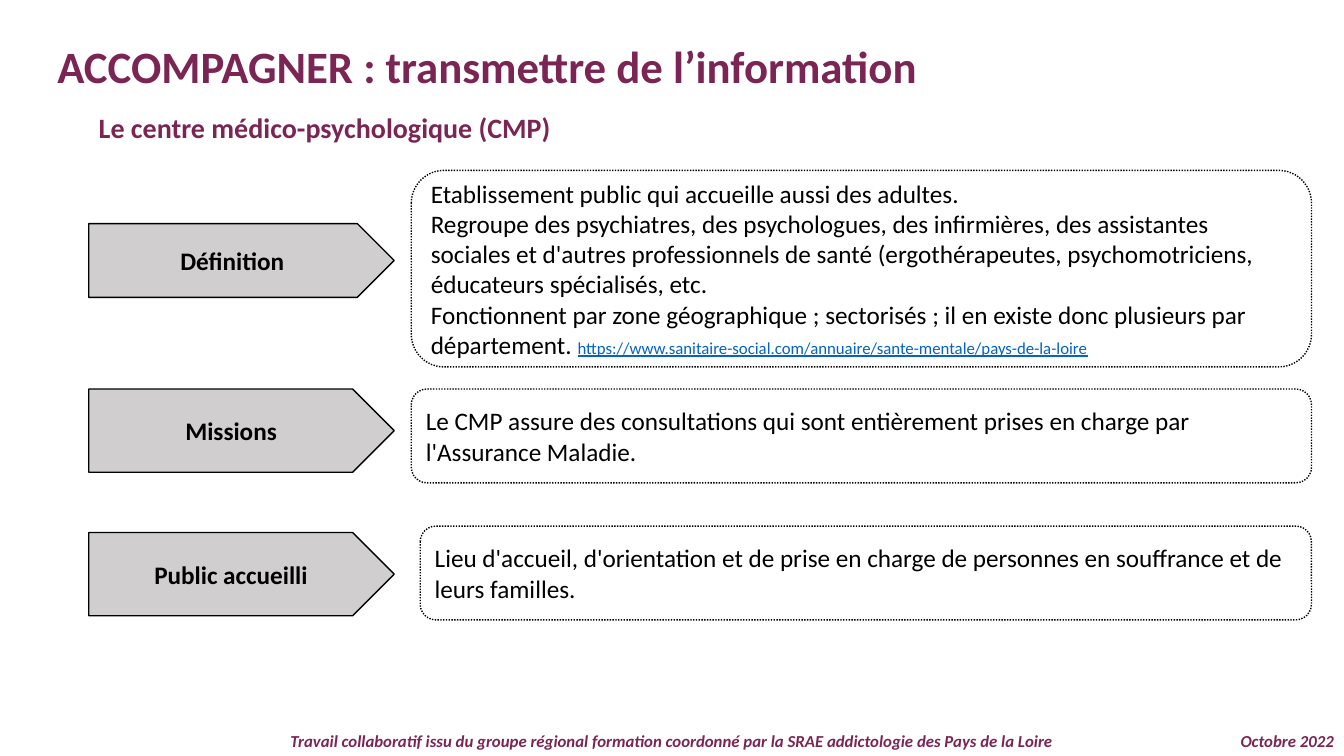
from dataclasses import dataclass

from pptx import Presentation
from pptx.dml.color import RGBColor
from pptx.enum.dml import MSO_LINE
from pptx.enum.shapes import MSO_SHAPE
from pptx.enum.text import MSO_ANCHOR, MSO_AUTO_SIZE, PP_ALIGN
from pptx.util import Pt

LEFT, CENTER, RIGHT = PP_ALIGN.LEFT, PP_ALIGN.CENTER, PP_ALIGN.RIGHT
TOP, MIDDLE = MSO_ANCHOR.TOP, MSO_ANCHOR.MIDDLE
PENTAGON, ROUNDED = MSO_SHAPE.PENTAGON, MSO_SHAPE.ROUNDED_RECTANGLE
DOTTED = MSO_LINE.ROUND_DOT
FIXED = MSO_AUTO_SIZE.NONE


@dataclass(frozen=True)
class Theme:
    font: str = "Calibri"
    plum: str = "7A2553"
    ink: str = "000000"
    grey: str = "D0CECE"
    link: str = "0563C1"
    title: int = 32
    subtitle: int = 20
    body: int = 18
    small: int = 12


THEME = Theme()
HEADING = {"bold": True, "color": THEME.plum}
TITLE = {"size": THEME.title, **HEADING}
SUBTITLE = {"size": THEME.subtitle, **HEADING}
FOOTER = {"size": THEME.small, "italic": True, **HEADING}
BODY = {"size": THEME.body, "color": THEME.ink}
LABEL = {"bold": True, **BODY}
LINK = {"size": THEME.small, "color": THEME.link, "underline": True}

PAGE_WIDTH, PAGE_HEIGHT = 960, 540
TAG_LEFT, TAG_WIDTH = 63.4, 218.2
CARD_RIGHT = 936.8
FOOTER_TOP, FOOTER_HEIGHT = 518.4, 21.6

ROWS = [
    {
        "label": "Définition",
        "tag": (159.8, 52.6),
        "card": (293.8, 121.7, 140.4),
        "text": [
            [("Etablissement public qui accueille aussi des adultes.", BODY)],
            [("Regroupe des psychiatres, des psychologues, des infirmières, des assistantes "
              "sociales et d'autres professionnels de santé (ergothérapeutes, "
              "psychomotriciens, éducateurs spécialisés, etc.", BODY)],
            [("Fonctionnent par zone géographique ; sectorisés ; il en existe donc plusieurs "
              "par département. ", BODY),
             ("https://www.sanitaire-social.com/annuaire/sante-mentale/pays-de-la-loire", LINK)],
        ],
    },
    {
        "label": "Missions",
        "tag": (277.9, 59.4),
        "card": (293.8, 277.9, 67),
        "text": [[("Le CMP assure des consultations qui sont entièrement prises en charge par "
                   "l'Assurance Maladie.", BODY)]],
    },
    {
        "label": "Public accueilli",
        "tag": (380.4, 59.4),
        "card": (300.2, 375.8, 67),
        "text": [[("Lieu d'accueil, d'orientation et de prise en charge de personnes en "
                   "souffrance et de leurs familles.", BODY)]],
    },
]


class SlideBuilder:
    def __init__(self, deck, theme):
        self.theme = theme
        self.page = deck.slides.add_slide(deck.slide_layouts[5])

    def fill_text(self, shape, paragraphs, align=LEFT, anchor=TOP):
        frame = shape.text_frame
        settings = {"word_wrap": True, "auto_size": FIXED, "vertical_anchor": anchor}
        for name, value in settings.items():
            setattr(frame, name, value)
        for index, spans in enumerate(paragraphs):
            para = frame.add_paragraph() if index else frame.paragraphs[0]
            para.alignment = align
            for text, style in spans:
                span = para.add_run()
                span.text = text
                self.style_font(span.font, style)

    def style_font(self, font, style):
        values = {"name": self.theme.font, **style}
        font.color.rgb = RGBColor.from_string(values.pop("color"))
        values["size"] = Pt(values["size"])
        for name, value in values.items():
            setattr(font, name, value)

    def title(self, text, left, top, width, height):
        box = self.page.shapes.title
        place = {"left": left, "top": top, "width": width, "height": height}
        for name, value in place.items():
            setattr(box, name, Pt(value))
        self.fill_text(box, [[(text, TITLE)]])

    def text(self, text, style, left, top, width, height, align=LEFT):
        box = self.page.shapes.add_textbox(Pt(left), Pt(top), Pt(width), Pt(height))
        self.fill_text(box, [[(text, style)]], align)

    def outline(self, kind, left, top, width, height):
        shape = self.page.shapes.add_shape(kind, Pt(left), Pt(top), Pt(width), Pt(height))
        shape.shadow.inherit = False
        shape.line.color.rgb = RGBColor.from_string(self.theme.ink)
        shape.line.width = Pt(1)
        return shape

    def tag(self, label, top, height):
        shape = self.outline(PENTAGON, TAG_LEFT, top, TAG_WIDTH, height)
        shape.fill.solid()
        shape.fill.fore_color.rgb = RGBColor.from_string(self.theme.grey)
        self.fill_text(shape, [[(label, LABEL)]], CENTER, MIDDLE)

    def card(self, paragraphs, left, top, height):
        shape = self.outline(ROUNDED, left, top, CARD_RIGHT - left, height)
        shape.fill.background()
        shape.line.dash_style = DOTTED
        self.fill_text(shape, paragraphs, LEFT, MIDDLE)


def main():
    deck = Presentation()
    deck.slide_width, deck.slide_height = Pt(PAGE_WIDTH), Pt(PAGE_HEIGHT)
    slide = SlideBuilder(deck, THEME)
    slide.title("ACCOMPAGNER : transmettre de l’information", 33.8, 23.8, 900, 46)
    slide.text("Le centre médico-psychologique (CMP)", SUBTITLE, TAG_LEFT, 75.6, 480, 31.7)
    for row in ROWS:
        slide.tag(row["label"], *row["tag"])
        slide.card(row["text"], *row["card"])
    slide.text("Travail collaboratif issu du groupe régional formation coordonné par la SRAE "
               "addictologie des Pays de la Loire", FOOTER,
               0, FOOTER_TOP, PAGE_WIDTH, FOOTER_HEIGHT, CENTER)
    slide.text("Octobre 2022", FOOTER, 860, FOOTER_TOP, 100, FOOTER_HEIGHT, RIGHT)
    deck.save("out.pptx")


if __name__ == "__main__":
    main()
